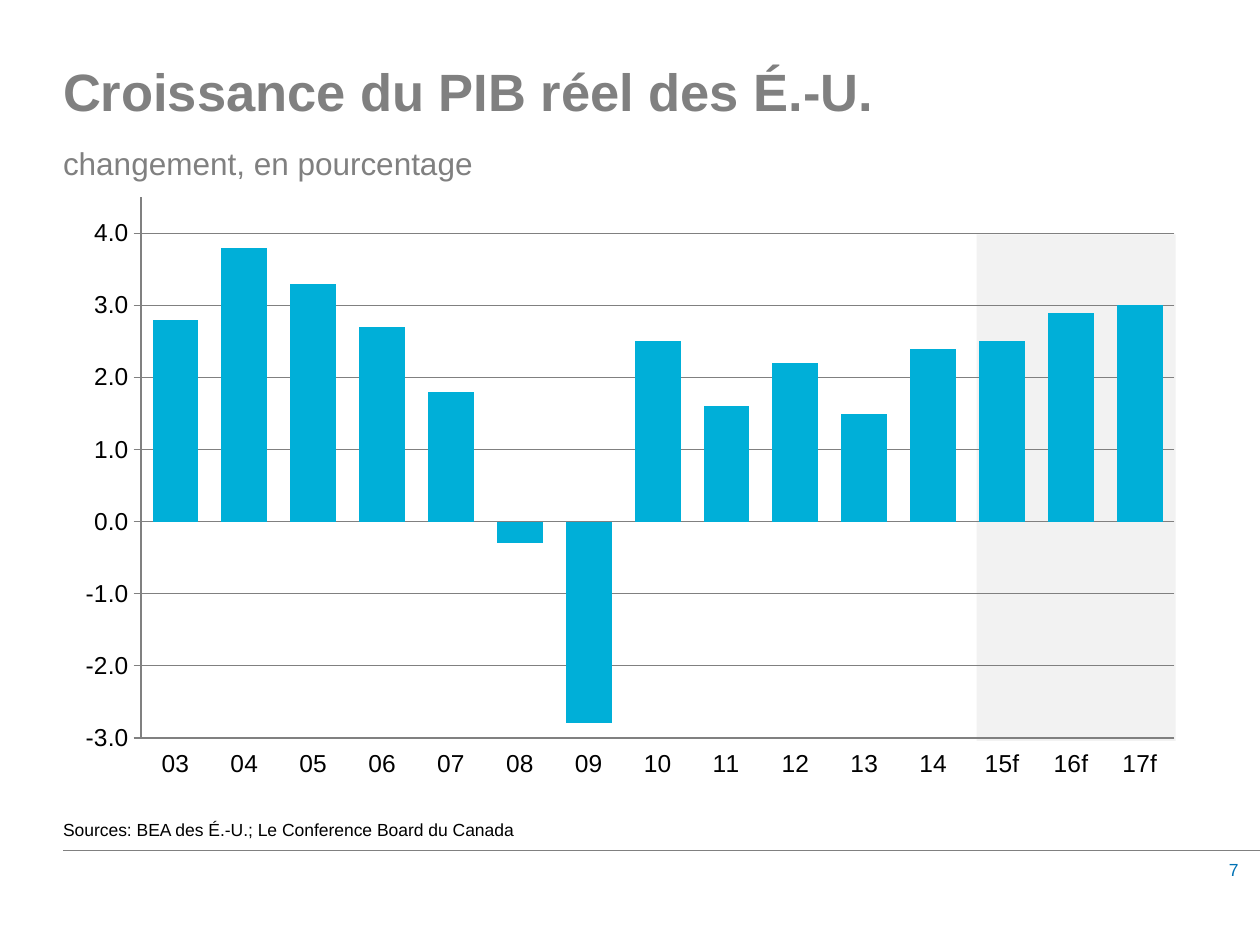
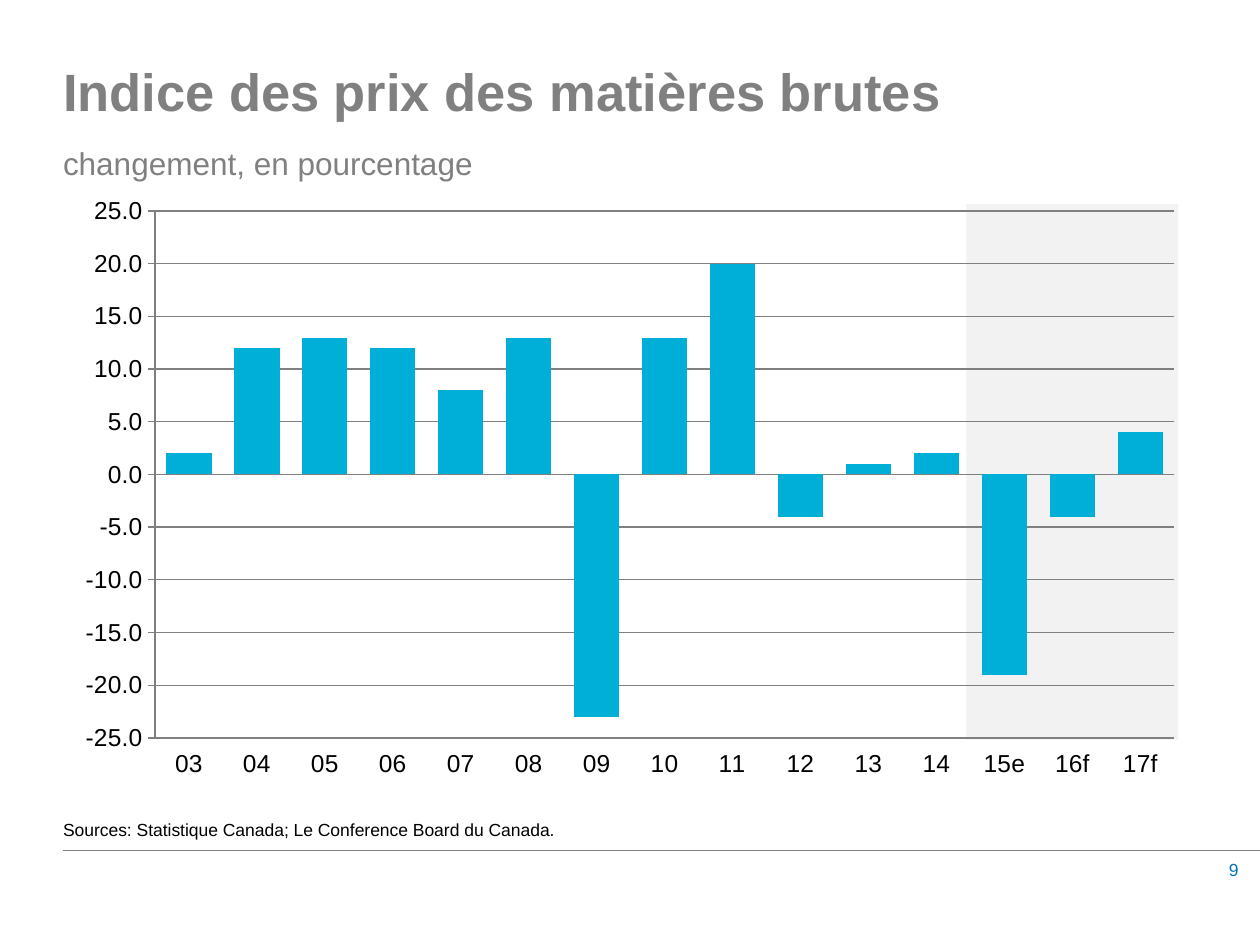
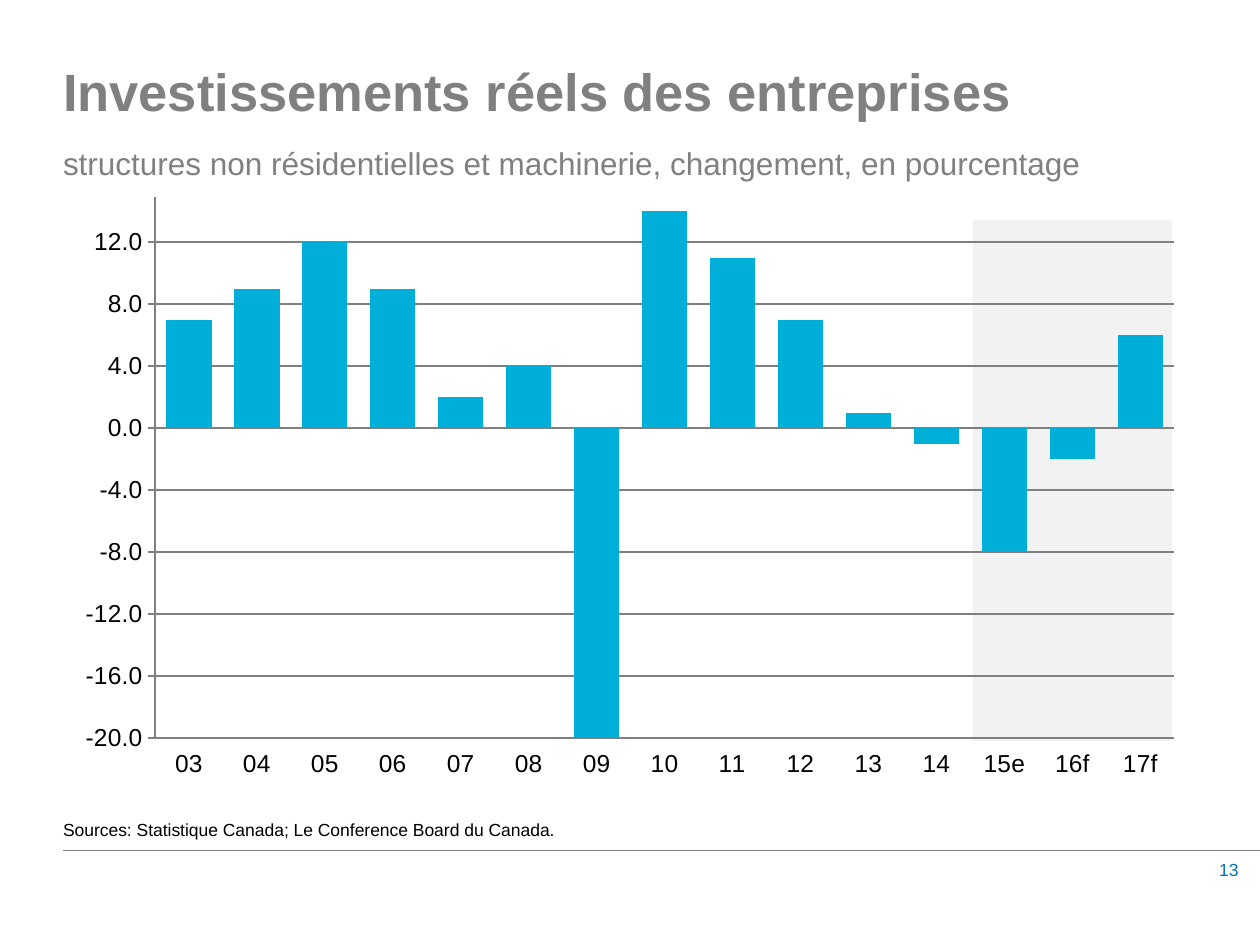
import pptx
import pptx.chart.data
import pptx.dml.color
import pptx.enum.chart
import pptx.enum.shapes
import pptx.enum.text
import pptx.oxml.ns
import pptx.oxml.xmlchemy
import pptx.util

COLOURS = {"grey": "808080", "page": "0072B5", "forecast": "F2F2F2",
           "bar": "00AFD8", "ink": "000000"}
FONT = "Arial"
COLUMNS, ROWS, CELL = 20, 15, 0.5
MARGIN, BODY_WIDTH = 1, 18
YEARS = [f"{year:02d}" for year in range(3, 15)]
CANADA_SOURCES = "Sources: Statistique Canada; Le Conference Board du Canada."
PERCENT_CHANGE = "changement, en pourcentage"

SLIDES = [
    {"title": "Croissance du PIB réel des É.-U.", "subtitle": PERCENT_CHANGE,
     "sources": "Sources: BEA des É.-U.; Le Conference Board du Canada",
     "page": "7", "forecast": (15.5, 3.72, 3.16, 8.04),
     "forecast_years": ["15f", "16f", "17f"],
     "scale": {"minimum_scale": -3, "maximum_scale": 4.5, "major_unit": 1},
     "growth": [2.8, 3.8, 3.3, 2.7, 1.8, -0.3, -2.8, 2.5, 1.6, 2.2, 1.5, 2.4, 2.5, 2.9, 3]},
    {"title": "Indice des prix des matières brutes", "subtitle": PERCENT_CHANGE,
     "sources": CANADA_SOURCES,
     "page": "9", "forecast": (15.34, 3.24, 3.36, 8.5),
     "forecast_years": ["15e", "16f", "17f"],
     "scale": {"minimum_scale": -25, "maximum_scale": 25, "major_unit": 5},
     "growth": [2, 12, 13, 12, 8, 13, -23, 13, 20, -4, 1, 2, -19, -4, 4]},
    {"title": "Investissements réels des entreprises",
     "subtitle": "structures non résidentielles et machinerie, changement, en pourcentage",
     "sources": CANADA_SOURCES,
     "page": "13", "forecast": (15.44, 3.5, 3.16, 8.26),
     "forecast_years": ["15e", "16f", "17f"],
     "scale": {"minimum_scale": -20, "maximum_scale": 14.9, "major_unit": 4},
     "growth": [7, 9, 12, 9, 2, 4, -20, 14, 11, 7, 1, -1, -8, -2, 6]},
]


def cells(*counts):
    """Turn counts of grid cells into lengths."""
    return [pptx.util.Inches(count * CELL) for count in counts]


def colour(name):
    """Return a colour of the palette."""
    return pptx.dml.color.RGBColor.from_string(COLOURS[name])


def element(tag):
    """Create an empty XML element."""
    return pptx.oxml.xmlchemy.OxmlElement(tag)


def style_font(font, size, tint, bold=False):
    """Apply the shared typeface with a size, colour and weight."""
    for key, value in {"name": FONT, "size": pptx.util.Pt(size), "bold": bold}.items():
        setattr(font, key, value)
    font.color.rgb = colour(tint)


def style_line(line):
    """Draw a thin grey rule."""
    line.color.rgb = colour("grey")
    line.width = pptx.util.Pt(0.75)


def style_frame(frame):
    """Remove the insets and anchor the text at the top."""
    settings = {"margin_left": 0, "margin_top": 0, "margin_right": 0, "margin_bottom": 0,
                "word_wrap": True, "vertical_anchor": pptx.enum.text.MSO_ANCHOR.TOP,
                "auto_size": pptx.enum.text.MSO_AUTO_SIZE.NONE}
    for key, value in settings.items():
        setattr(frame, key, value)


def set_heading(slide, title, subtitle):
    """Fill the title placeholder with a bold title and a lighter subtitle."""
    heading = slide.shapes.title
    place = cells(MARGIN, 1, BODY_WIDTH, 1.94)
    for key, value in zip(("left", "top", "width", "height"), place):
        setattr(heading, key, value)
    style_frame(heading.text_frame)
    paragraph = heading.text_frame.paragraphs[0]
    paragraph.alignment = pptx.enum.text.PP_ALIGN.LEFT
    paragraph.line_spacing = pptx.util.Pt(34)
    title_run = paragraph.add_run()
    title_run.text = title
    style_font(title_run.font, 30, "grey", True)
    paragraph.add_line_break()
    subtitle_run = paragraph.add_run()
    subtitle_run.text = subtitle
    style_font(subtitle_run.font, 18, "grey")


def add_note(slide, place, text, tint, alignment):
    """Add a small line of text."""
    frame = slide.shapes.add_textbox(*cells(*place)).text_frame
    style_frame(frame)
    paragraph = frame.paragraphs[0]
    paragraph.alignment = alignment
    run = paragraph.add_run()
    run.text = text
    style_font(run.font, 10, tint)


def add_footer(slide, sources, page):
    """Add the sources, the rule and the page number."""
    align = pptx.enum.text.PP_ALIGN
    add_note(slide, (MARGIN, 13, 17.76, 0.5), sources, "ink", align.LEFT)
    rule = slide.shapes.add_connector(pptx.enum.shapes.MSO_CONNECTOR.STRAIGHT,
                                      *cells(MARGIN, 13.5, COLUMNS, 13.5))
    style_line(rule.line)
    rule._element.spPr.append(element("a:effectLst"))
    add_note(slide, (19, 13.64, 0.66, 0.34), page, "page", align.RIGHT)


def add_forecast_band(slide, place):
    """Shade the forecast years behind the chart."""
    band = slide.shapes.add_shape(pptx.enum.shapes.MSO_SHAPE.RECTANGLE, *cells(*place))
    band.shadow.inherit = False
    band.fill.solid()
    band.fill.fore_color.rgb = colour("forecast")
    band.line.fill.background()


def no_fill():
    """Build chart shape properties without fill or line."""
    properties = element("c:spPr")
    properties.append(element("a:noFill"))
    outline = element("a:ln")
    outline.append(element("a:noFill"))
    properties.append(outline)
    return properties


def style_axes(chart, scale):
    """Format the year axis and the value axis."""
    tick = pptx.enum.chart.XL_TICK_MARK
    years, values = chart.category_axis, chart.value_axis
    for axis, number_format, mark in ((years, "00", tick.NONE),
                                      (values, "#,##0.0", tick.OUTSIDE)):
        axis.major_tick_mark = mark
        axis.minor_tick_mark = tick.NONE
        axis.tick_labels.number_format = number_format
        axis.tick_labels.number_format_is_linked = False
        style_font(axis.tick_labels.font, 14, "ink")
    years.tick_label_position = pptx.enum.chart.XL_TICK_LABEL_POSITION.LOW
    years.format.line.fill.background()
    for key, value in scale.items():
        setattr(values, key, value)
    style_line(values.format.line)
    style_line(values.major_gridlines.format.line)


def add_growth_chart(slide, forecast_years, growth, scale):
    """Add the transparent column chart of yearly growth."""
    data = pptx.chart.data.CategoryChartData()
    data.categories = YEARS + forecast_years
    data.add_series("Series 1", growth)
    chart = slide.shapes.add_chart(pptx.enum.chart.XL_CHART_TYPE.COLUMN_CLUSTERED,
                                   *cells(MARGIN, 2.94, BODY_WIDTH, 9.6), data).chart
    chart.has_legend = False
    chart.has_title = False
    style_font(chart.font, 18, "ink")
    style_axes(chart, scale)
    plot = chart.plots[0]
    plot.gap_width = 50
    plot.vary_by_categories = False
    series = plot.series[0]
    series.invert_if_negative = False
    series.format.fill.solid()
    series.format.fill.fore_color.rgb = colour("bar")
    body = chart._chartSpace.find(pptx.oxml.ns.qn("c:chart"))
    body.addnext(no_fill())
    body.find(pptx.oxml.ns.qn("c:plotArea")).append(no_fill())


def main():
    """Build the three growth slides."""
    deck = pptx.Presentation()
    deck.slide_width, deck.slide_height = cells(COLUMNS, ROWS)
    title_only = deck.slide_layouts[5]
    for content in SLIDES:
        slide = deck.slides.add_slide(title_only)
        add_forecast_band(slide, content["forecast"])
        add_growth_chart(slide, content["forecast_years"], content["growth"], content["scale"])
        set_heading(slide, content["title"], content["subtitle"])
        add_footer(slide, content["sources"], content["page"])
    deck.save("out.pptx")


if __name__ == "__main__":
    main()
